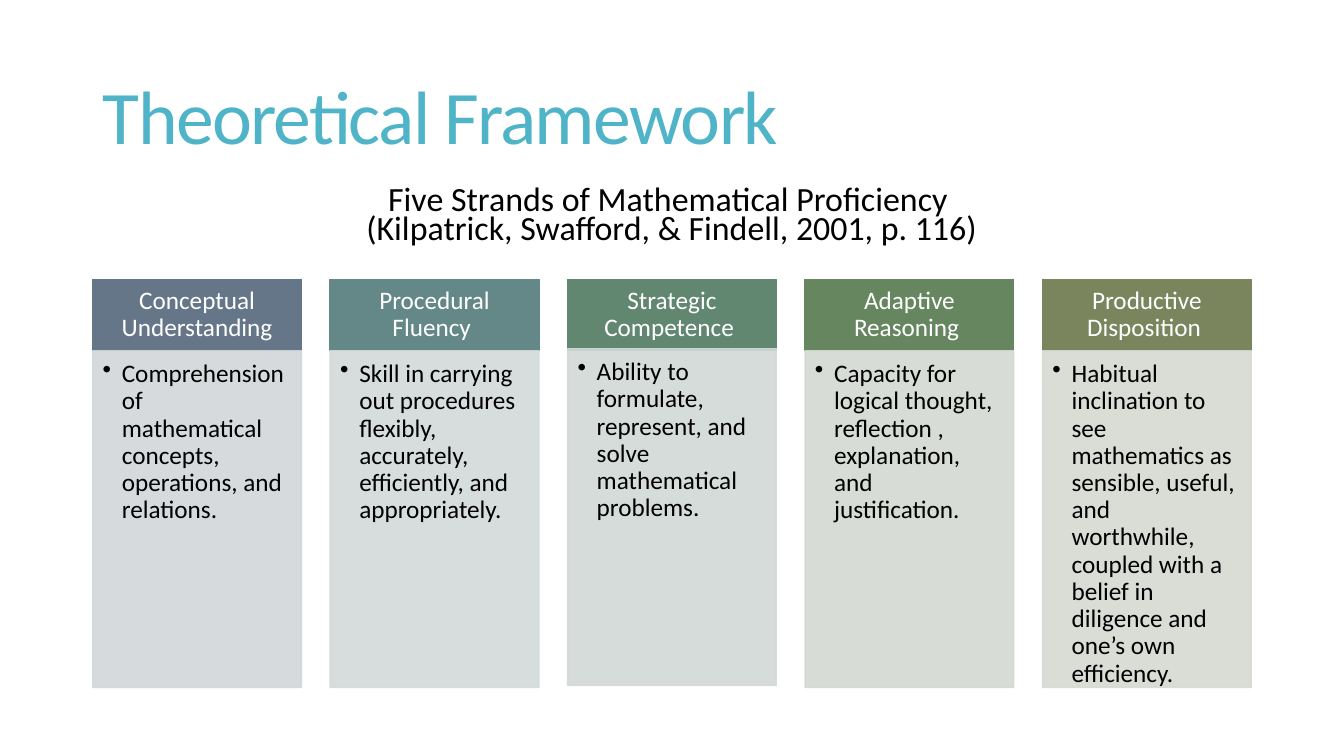
from lxml import etree
from pptx import Presentation
from pptx import util as u
from pptx.dml.color import RGBColor
from pptx.enum import shapes, text
from pptx.oxml import ns

SCALE = 9144
WHITE = RGBColor(0xFF, 0xFF, 0xFF)
BLACK = RGBColor(0x00, 0x00, 0x00)
TURQUOISE = RGBColor(0x50, 0xB4, 0xC8)
SLATE = RGBColor(0x65, 0x76, 0x89)
TEAL = RGBColor(0x63, 0x88, 0x87)
GREEN = RGBColor(0x61, 0x87, 0x70)
MOSS = RGBColor(0x65, 0x86, 0x5F)
OLIVE = RGBColor(0x7A, 0x85, 0x5D)
PALE_SLATE = RGBColor(0xD3, 0xD6, 0xDA)
PALE_TEAL = RGBColor(0xD3, 0xDA, 0xDA)
PALE_GREEN = RGBColor(0xD2, 0xD9, 0xD6)
PALE_MOSS = RGBColor(0xD3, 0xD9, 0xD2)
PALE_OLIVE = RGBColor(0xD7, 0xD9, 0xD2)

COLUMN_LEFT, COLUMN_TOP, COLUMN_WIDTH = 92, 277, 207
COLUMN_STEP = 235.5
HEADER_HEIGHT, BODY_HEIGHT = 71, 334

STRANDS = [
    ("Conceptual Understanding", SLATE, PALE_SLATE, 348,
     "Comprehension of mathematical concepts, operations, and relations."),
    ("Procedural Fluency ", TEAL, PALE_TEAL, 348,
     "Skill in carrying out procedures flexibly, accurately, efficiently, and appropriately."),
    ("Strategic Competence ", GREEN, PALE_GREEN, 346,
     "Ability to formulate, represent, and solve mathematical problems."),
    ("Adaptive Reasoning ", MOSS, PALE_MOSS, 348,
     "Capacity for logical thought, reflection , explanation, and justification."),
    ("Productive Disposition ", OLIVE, PALE_OLIVE, 348,
     "Habitual inclination to see mathematics as sensible, useful, and worthwhile, "
     "coupled with a belief in diligence and one’s own efficiency."),
]


def px(value):
    return u.Emu(round(value * SCALE))


def apply(target, values):
    for name, value in values.items():
        setattr(target, name, value)


class SlideBuilder:
    font_name = "Calibri"

    def __init__(self, slide):
        self.slide = slide

    def set_text(self, shape, lines, size, color, align, spacing, anchor, insets=(10, 5, 10, 5)):
        frame = shape.text_frame
        frame.text = "\n".join(lines)
        sides = ("margin_left", "margin_top", "margin_right", "margin_bottom")
        apply(frame, dict(zip(sides, map(px, insets))))
        apply(frame, {"word_wrap": True, "auto_size": text.MSO_AUTO_SIZE.NONE,
                      "vertical_anchor": anchor})
        for paragraph in frame.paragraphs:
            apply(paragraph, {"alignment": align, "line_spacing": spacing,
                              "space_before": u.Pt(0)})
            font = paragraph.runs[0].font
            apply(font, {"name": self.font_name, "size": u.Pt(size)})
            font.color.rgb = color

    def title(self, wording, left, top, width, height):
        shape = self.slide.shapes.title
        apply(shape, {"left": px(left), "top": px(top), "width": px(width), "height": px(height)})
        self.set_text(shape, [wording], 54, TURQUOISE, text.PP_ALIGN.LEFT, 0.85,
                      text.MSO_ANCHOR.MIDDLE)
        run = shape.text_frame.paragraphs[0].runs[0]
        run._r.get_or_add_rPr().set("spc", "-120")

    def caption(self, lines, left, top, width, height):
        shape = self.slide.shapes.add_textbox(px(left), px(top), px(width), px(height))
        self.set_text(shape, lines, 24.2, BLACK, text.PP_ALIGN.CENTER, 0.7,
                      text.MSO_ANCHOR.MIDDLE)

    def box(self, left, top, width, height, color):
        shape = self.slide.shapes.add_shape(
            shapes.MSO_SHAPE.RECTANGLE, px(left), px(top), px(width), px(height))
        shape.shadow.inherit = False
        shape.fill.solid()
        shape.fill.fore_color.rgb = color
        shape.line.color.rgb = color
        shape.line.width = u.Pt(1)
        return shape

    def header(self, wording, left, color):
        shape = self.box(left, COLUMN_TOP, COLUMN_WIDTH, HEADER_HEIGHT, color)
        self.set_text(shape, [wording], 18, WHITE, text.PP_ALIGN.CENTER, 0.9,
                      text.MSO_ANCHOR.MIDDLE, (14, 8, 14, 8))

    def body(self, wording, left, top, color):
        shape = self.box(left, top, COLUMN_WIDTH, BODY_HEIGHT, color)
        for fill_color in shape._element.spPr.iter(ns.qn("a:srgbClr")):
            etree.SubElement(fill_color, ns.qn("a:alpha"), val="90000")
        self.set_text(shape, [wording], 18, BLACK, text.PP_ALIGN.LEFT, 0.9,
                      text.MSO_ANCHOR.TOP, (10, 10, 14, 16))
        properties = shape.text_frame.paragraphs[0]._p.get_or_add_pPr()
        properties.set("marL", str(px(19)))
        properties.set("indent", str(px(-19)))
        etree.SubElement(properties, ns.qn("a:buChar"), char="•")


def main():
    presentation = Presentation()
    apply(presentation, {"slide_width": px(1333), "slide_height": px(750)})
    builder = SlideBuilder(presentation.slides.add_slide(presentation.slide_layouts[5]))
    builder.title("Theoretical Framework", 92, 48, 1150, 145)
    for index, (name, color, pale, body_top, meaning) in enumerate(STRANDS):
        left = COLUMN_LEFT + index * COLUMN_STEP
        builder.header(name, left, color)
        builder.body(meaning, left, body_top, pale)
    builder.caption(["Five Strands of Mathematical Proficiency ",
                     "(Kilpatrick, Swafford, & Findell, 2001, p. 116)"], 250, 180, 833, 71)
    presentation.save("out.pptx")


if __name__ == "__main__":
    main()
